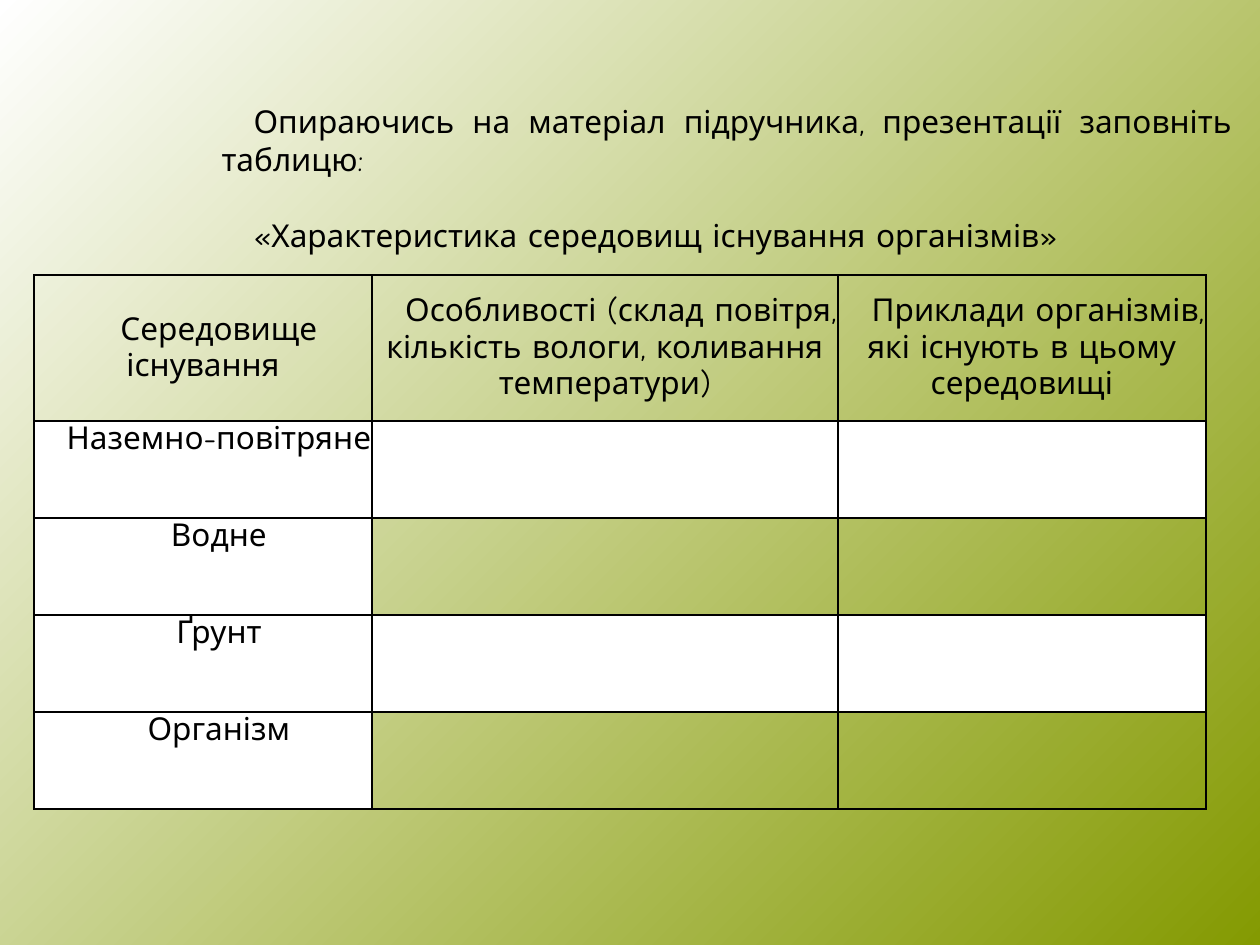
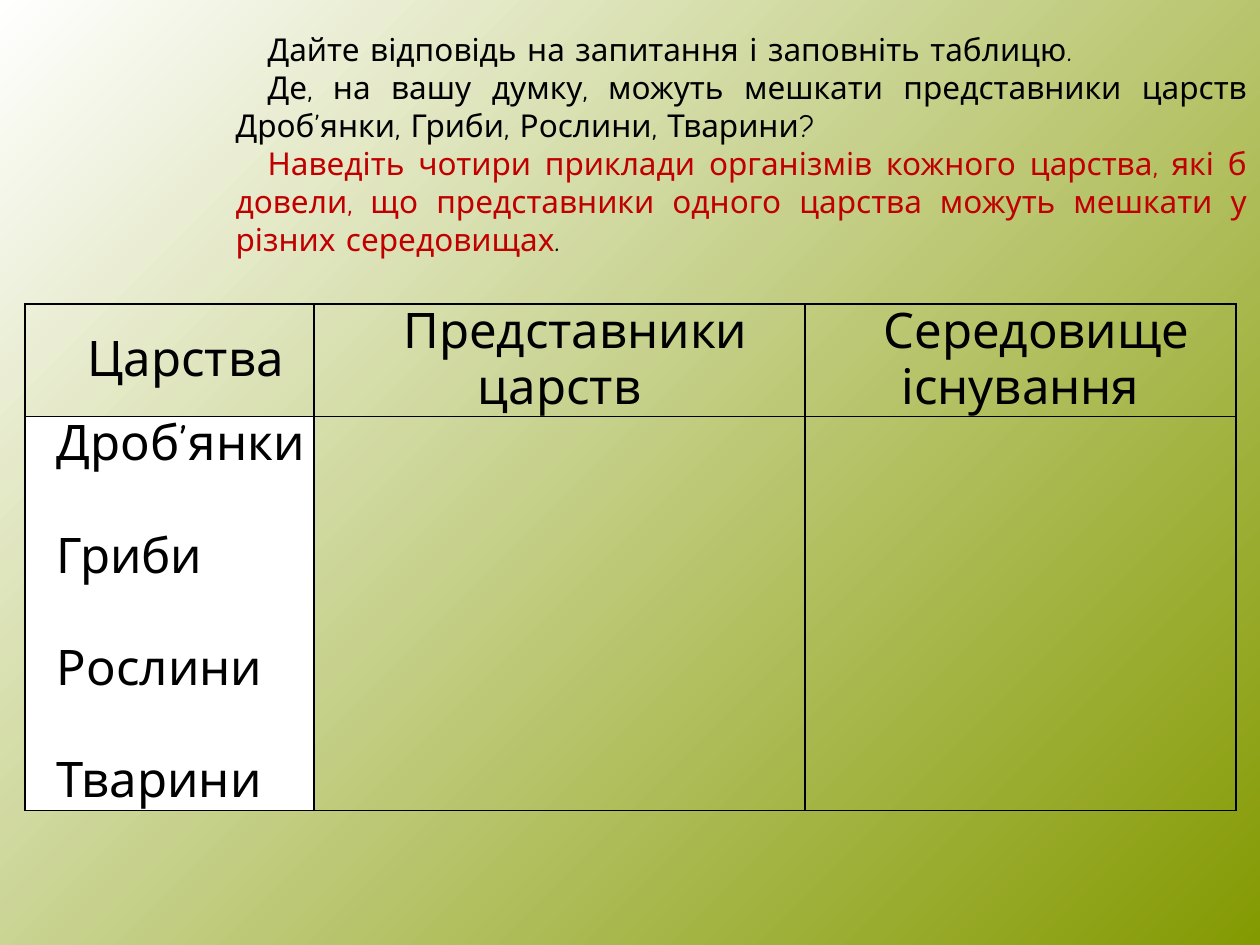
from pptx import Presentation
from pptx.dml.color import RGBColor
from pptx.enum.text import MSO_ANCHOR, MSO_AUTO_SIZE, PP_ALIGN
from pptx.util import Emu, Pt
from pptx.oxml import parse_xml
from pptx.oxml.ns import nsdecls

PX_PER_INCH = 126
SLIDE_SIZE = (1260, 945)
INDENT = 32
FONT = "Comic Neue"
BLACK = RGBColor(0x00, 0x00, 0x00)
WHITE = RGBColor(0xFF, 0xFF, 0xFF)
RED = RGBColor(0xC0, 0x00, 0x00)
GREEN = RGBColor(0x84, 0x9A, 0x02)
TITLE_ONLY = 5


def px(length):
    return Emu(round(length * 914400 / PX_PER_INCH))


def paint_background(master):
    fill = master.background.fill
    fill.gradient()
    fill.gradient_angle = 315
    for stop, color in zip(fill.gradient_stops, (WHITE, GREEN)):
        stop.color.rgb = color


def write_paragraphs(frame, paragraphs, size, alignment, gap=0, line_spacing=None):
    """Each paragraph is a list of (text, color) runs; gap separates paragraphs."""
    for index, runs in enumerate(paragraphs):
        paragraph = frame.add_paragraph() if index else frame.paragraphs[0]
        paragraph.alignment = alignment
        paragraph.space_before = Pt(gap if index else 0)
        if line_spacing:
            paragraph.line_spacing = Pt(line_spacing)
        properties = paragraph._p.get_or_add_pPr()
        properties.set("marL", "0")
        properties.set("indent", str(px(INDENT)))
        for text, color in runs:
            run = paragraph.add_run()
            run.text = text
            run.font.name = FONT
            run.font.size = Pt(size)
            run.font.color.rgb = color


def add_task(slide, box, paragraphs):
    """Task wording in the title placeholder."""
    title = slide.shapes.title
    title.left, title.top, title.width, title.height = map(px, box)
    frame = title.text_frame
    frame.word_wrap = True
    frame.auto_size = MSO_AUTO_SIZE.NONE
    frame.vertical_anchor = MSO_ANCHOR.TOP
    write_paragraphs(frame, paragraphs, 18, PP_ALIGN.JUSTIFY, line_spacing=21.7)
    return frame


def add_borders(cell):
    properties = cell._tc.get_or_add_tcPr()
    for index, side in enumerate(("lnL", "lnR", "lnT", "lnB")):
        properties.insert(index, parse_xml(
            f'<a:{side} {nsdecls("a")} w="{Pt(1)}"><a:solidFill>'
            f'<a:srgbClr val="{BLACK}"/></a:solidFill></a:{side}>'))


def add_grid(slide, origin, columns, rows, white_cells):
    """Bordered table whose cells are clear, except the white ones."""
    left, top = origin
    table = slide.shapes.add_table(
        len(rows), len(columns), px(left), px(top),
        px(sum(columns)), px(sum(rows))).table
    table.first_row = table.horz_banding = False
    for column, width in zip(table.columns, columns):
        column.width = px(width)
    for row_index, (row, height) in enumerate(zip(table.rows, rows)):
        row.height = px(height)
        for column_index, cell in enumerate(row.cells):
            cell.margin_left = cell.margin_right = 0
            cell.margin_top = cell.margin_bottom = 0
            if (row_index, column_index) in white_cells:
                cell.fill.solid()
                cell.fill.fore_color.rgb = WHITE
            else:
                cell.fill.background()
            add_borders(cell)
    return table


def write_header(table, headings, size):
    for cell, heading in zip(table.rows[0].cells, headings):
        cell.vertical_anchor = MSO_ANCHOR.MIDDLE
        write_paragraphs(cell.text_frame, [[(heading, BLACK)]], size, PP_ALIGN.CENTER)


def add_environments_slide(presentation):
    slide = presentation.slides.add_slide(presentation.slide_layouts[TITLE_ONLY])

    # Task and table name, one line apart
    frame = add_task(slide, (209, 96, 1036, 165), [
        [("Опираючись на матеріал підручника, презентації заповніть таблицю:", BLACK)],
        [("«Характеристика середовищ існування організмів»", BLACK)],
    ])
    frame.paragraphs[1].space_before = Pt(21.7)

    # Environments table: white first column and every other row
    environments = ["Наземно-повітряне", "Водне", "Ґрунт", "Організм"]
    white_cells = {(row, column) for row in range(1, 5) for column in range(3)
                   if column == 0 or row % 2}
    table = add_grid(slide, (34, 275), [338, 466, 368],
                     [146] + [97] * len(environments), white_cells)
    write_header(table, [
        "Середовище існування",
        "Особливості (склад повітря, кількість вологи, коливання температури)",
        "Приклади організмів, які існують в цьому середовищі",
    ], 18)
    for row, environment in enumerate(environments, start=1):
        write_paragraphs(table.cell(row, 0).text_frame, [[(environment, BLACK)]],
                         18, PP_ALIGN.CENTER)


def add_kingdoms_slide(presentation):
    slide = presentation.slides.add_slide(presentation.slide_layouts[TITLE_ONLY])

    # Questions
    add_task(slide, (223, 23, 1037, 280), [
        [("Дайте відповідь на запитання і заповніть таблицю.", BLACK)],
        [("Де, на вашу думку, можуть мешкати представники царств "
          "Дроб’янки, Гриби, Рослини, Тварини?", BLACK)],
        [("Наведіть чотири приклади організмів кожного царства, які б довели, "
          "що представники одного царства можуть мешкати у різних середовищах", RED),
         (".", BLACK)],
    ])

    # Kingdoms table
    table = add_grid(slide, (25, 304), [289, 491, 431], [112, 394], {(1, 0)})
    write_header(table, ["Царства", "Представники царств", "Середовище існування"], 28)
    kingdoms = ["Дроб’янки", "Гриби", "Рослини", "Тварини"]
    write_paragraphs(table.cell(1, 0).text_frame,
                     [[(kingdom, BLACK)] for kingdom in kingdoms],
                     28, PP_ALIGN.JUSTIFY, gap=32)


def main():
    presentation = Presentation()
    presentation.slide_width, presentation.slide_height = map(px, SLIDE_SIZE)
    paint_background(presentation.slide_master)
    add_environments_slide(presentation)
    add_kingdoms_slide(presentation)
    presentation.save("out.pptx")


if __name__ == "__main__":
    main()
